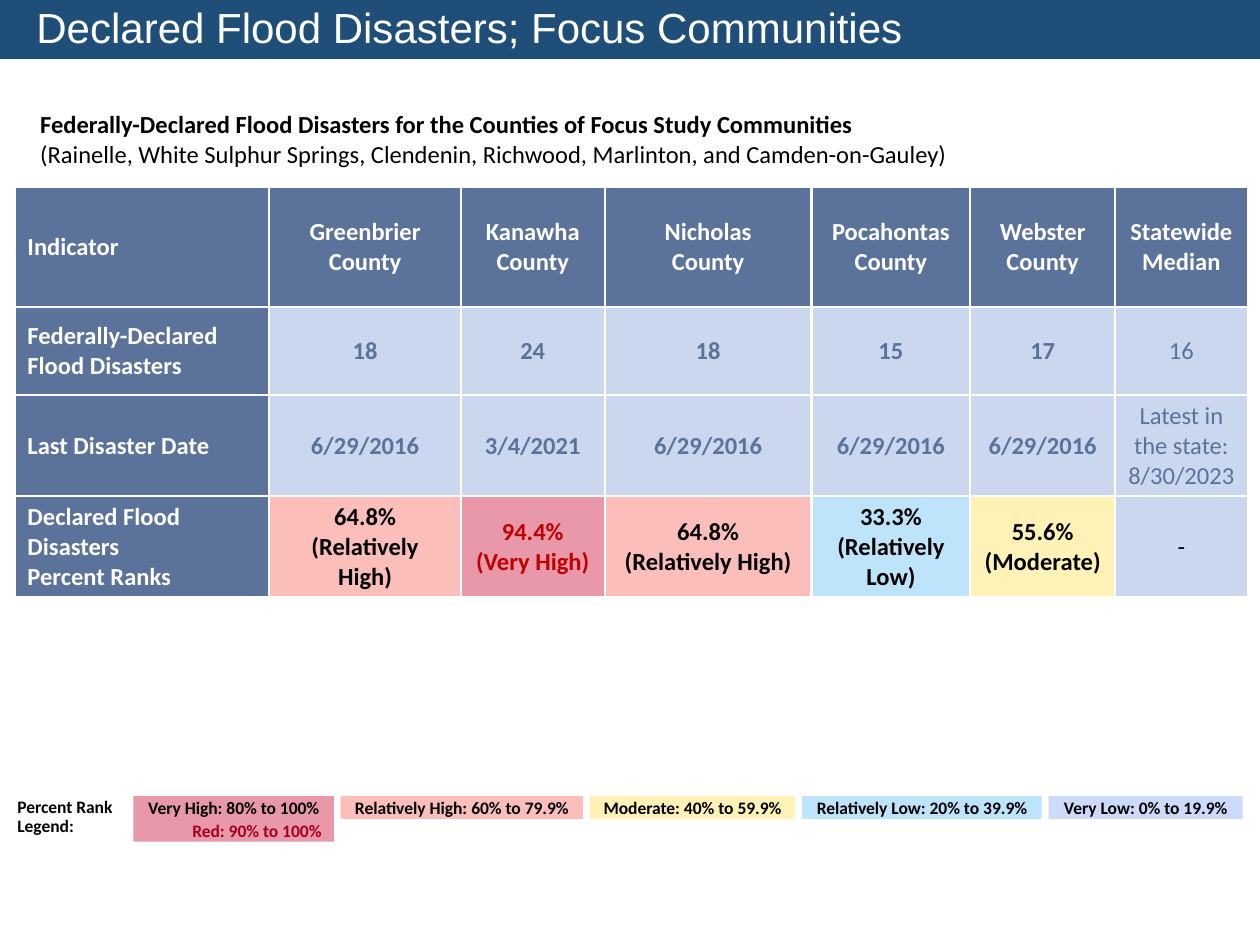
"""Build the slide on declared flood disasters in the focus communities."""
from dataclasses import dataclass
from typing import Any

import lxml.etree
import pptx
import pptx.dml.color
import pptx.enum.shapes
import pptx.enum.text
import pptx.oxml.ns
import pptx.util

Cm = pptx.util.Cm
Pt = pptx.util.Pt
Align = pptx.enum.text.PP_ALIGN
Anchor = pptx.enum.text.MSO_ANCHOR
Rect = pptx.enum.shapes.MSO_SHAPE.RECTANGLE


@dataclass(frozen=True)
class Theme:
    navy: str = "1F4E79"
    slate: str = "5B739B"
    pale: str = "CAD7EE"
    white: str = "FFFFFF"
    black: str = "000000"
    rose: str = "E898A8"
    pink: str = "FBBEBA"
    cream: str = "FFF2B7"
    sky: str = "BDE4FB"
    lilac: str = "CEDAF9"
    red: str = "C00000"
    wine: str = "A50021"
    face: str = "Calibri"
    head: str = "Arial"
    large: int = 24
    mid: int = 14
    small: int = 10


@dataclass(frozen=True)
class Rank:
    text: str
    fill: str
    color: str = "000000"
    bold: bool = True


@dataclass(frozen=True)
class Key:
    text: str
    fill: str
    width: float


THEME = Theme()
WIDTHS = (5.13, 3.86, 2.9, 4.17, 3.2, 2.92, 2.67)
HEIGHTS = (2.41, 1.78, 2.03, 2.03)
HEADS = ("Indicator", "Greenbrier\nCounty", "Kanawha\nCounty", "Nicholas\nCounty",
         "Pocahontas\nCounty", "Webster\nCounty", "Statewide\nMedian")
COUNTS = ("Federally-Declared Flood Disasters", "18", "24", "18", "15", "17", "16")
DATES = ("Last Disaster Date", "6/29/2016", "3/4/2021", "6/29/2016", "6/29/2016",
         "6/29/2016", "Latest in the state: 8/30/2023")
SIDE = "Declared Flood Disasters\nPercent Ranks"
RANKS = (
    Rank("64.8%\n(Relatively High)", THEME.pink),
    Rank("94.4%\n(Very High)", THEME.rose, THEME.red),
    Rank("64.8%\n(Relatively High)", THEME.pink),
    Rank("33.3%\n(Relatively Low)", THEME.sky),
    Rank("55.6%\n(Moderate)", THEME.cream),
    Rank("-", THEME.pale, bold=False),
)
KEYS = (
    Key("Very High: 80% to 100%", THEME.rose, 4.04),
    Key("Relatively High: 60% to 79.9%", THEME.pink, 4.88),
    Key("Moderate: 40% to 59.9%", THEME.cream, 4.14),
    Key("Relatively Low: 20% to 39.9%", THEME.sky, 4.83),
    Key("Very Low: 0% to 19.9%", THEME.lilac, 3.91),
)
KEY_LEFT, KEY_TOP, KEY_HIGH, KEY_GAP = 2.69, 16.05, 0.46, 0.14


def rgb(code: str) -> pptx.dml.color.RGBColor:
    """Turn a hex code into a colour."""
    return pptx.dml.color.RGBColor.from_string(code)


def paint(item: Any, code: str) -> None:
    """Fill a shape or cell with one colour."""
    item.fill.solid()
    item.fill.fore_color.rgb = rgb(code)


def write(frame: Any, text: str, size: int, color: str, bold: bool = True,
          align: Any = Align.LEFT, face: str = THEME.face) -> None:
    """Fill a text frame with evenly styled paragraphs."""
    frame.text = text
    frame.word_wrap = True
    for para in frame.paragraphs:
        para.alignment = align
        font = para.font
        font.name, font.size, font.bold = face, Pt(size), bold
        font.color.rgb = rgb(color)


def edge(cell: Any, sides: dict[str, float]) -> None:
    """Draw white borders of the given widths around a cell."""
    props = cell._tc.get_or_add_tcPr()
    for place, (side, width) in enumerate(sides.items()):
        line = lxml.etree.Element(pptx.oxml.ns.qn(f"a:ln{side}"), w=str(Pt(width)))
        fill = lxml.etree.SubElement(line, pptx.oxml.ns.qn("a:solidFill"))
        lxml.etree.SubElement(fill, pptx.oxml.ns.qn("a:srgbClr"), val=THEME.white)
        props.insert(place, line)


def add_title(slide: Any) -> None:
    """Set the title as a band across the top."""
    title = slide.shapes.title
    title.left, title.top, title.width, title.height = Cm(0), Cm(0), Cm(25.4), Cm(1.19)
    paint(title, THEME.navy)
    frame = title.text_frame
    write(frame, "Declared Flood Disasters; Focus Communities", THEME.large,
          THEME.white, False, face=THEME.head)
    frame.auto_size = pptx.enum.text.MSO_AUTO_SIZE.NONE
    frame.vertical_anchor = Anchor.BOTTOM
    para = frame.paragraphs[0]
    para.line_spacing = 0.9
    para._p.get_or_add_pPr().set("marL", str(Cm(0.48)))


def add_intro(slide: Any) -> None:
    """Place the two lines above the table."""
    box = slide.shapes.add_textbox(Cm(0.56), Cm(2.08), Cm(24.31), Cm(1.45))
    write(box.text_frame,
          "Federally-Declared Flood Disasters for the Counties of Focus Study Communities\n"
          "(Rainelle, White Sulphur Springs, Clendenin, Richwood, Marlinton, "
          "and Camden-on-Gauley)", THEME.mid, THEME.black)
    box.text_frame.paragraphs[1].font.bold = False


def add_grid(slide: Any) -> None:
    """Place the table of counties."""
    last = len(WIDTHS) - 1
    rows = [[Rank(text, THEME.slate, THEME.white) for text in HEADS]]
    for side, *cells in (COUNTS, DATES):
        rows.append([Rank(side, THEME.slate, THEME.white)] + [
            Rank(text, THEME.pale, THEME.slate, col < last)
            for col, text in enumerate(cells, 1)])
    rows.append([Rank(SIDE, THEME.slate, THEME.white), *RANKS])
    table = slide.shapes.add_table(len(rows), len(WIDTHS), Cm(0.3), Cm(3.78),
                                   Cm(sum(WIDTHS)), Cm(sum(HEIGHTS))).table
    table.first_row = table.horz_banding = False
    for col, width in zip(table.columns, WIDTHS):
        col.width = Cm(width)
    for row, height in zip(table.rows, HEIGHTS):
        row.height = Cm(height)
    for y, row in enumerate(rows):
        for x, rank in enumerate(row):
            cell = table.cell(y, x)
            cell.vertical_anchor = Anchor.MIDDLE
            paint(cell, rank.fill)
            write(cell.text_frame, rank.text, THEME.mid, rank.color, rank.bold,
                  Align.CENTER if x else Align.LEFT)
            edge(cell, {"L": 1.5 if x else 1, "R": 1.5 if x < last else 1,
                        "T": 1.5 if y else 1, "B": 1.5})


def add_key(slide: Any, key: Key, left: float, top: float,
            color: str = THEME.black, align: Any = Align.CENTER) -> None:
    """Place one filled legend box."""
    box = slide.shapes.add_shape(Rect, Cm(left), Cm(top), Cm(key.width), Cm(KEY_HIGH))
    box.shadow.inherit = False
    paint(box, key.fill)
    box.line.fill.background()
    box.text_frame.vertical_anchor = Anchor.MIDDLE
    write(box.text_frame, key.text, THEME.small, color, align=align)


def add_legend(slide: Any) -> None:
    """Place the legend row, its label and the red note."""
    left = KEY_LEFT
    for key in KEYS:
        add_key(slide, key, left, KEY_TOP)
        left += key.width + KEY_GAP
    label = slide.shapes.add_textbox(Cm(0.1), Cm(15.98), Cm(2.67), Cm(0.97))
    write(label.text_frame, "Percent Rank Legend:", THEME.small, THEME.black)
    label.text_frame.paragraphs[0].line_spacing = 0.9
    note = Key("Red: 90% to 100%", THEME.rose, KEYS[0].width)
    add_key(slide, note, KEY_LEFT, KEY_TOP + KEY_HIGH, THEME.wine, Align.RIGHT)


def main() -> None:
    """Build and save the deck."""
    deck = pptx.Presentation()
    deck.slide_width, deck.slide_height = Cm(25.4), Cm(19.05)
    slide = deck.slides.add_slide(deck.slide_layouts[5])
    add_title(slide)
    add_intro(slide)
    add_grid(slide)
    add_legend(slide)
    deck.save("out.pptx")


if __name__ == "__main__":
    main()
